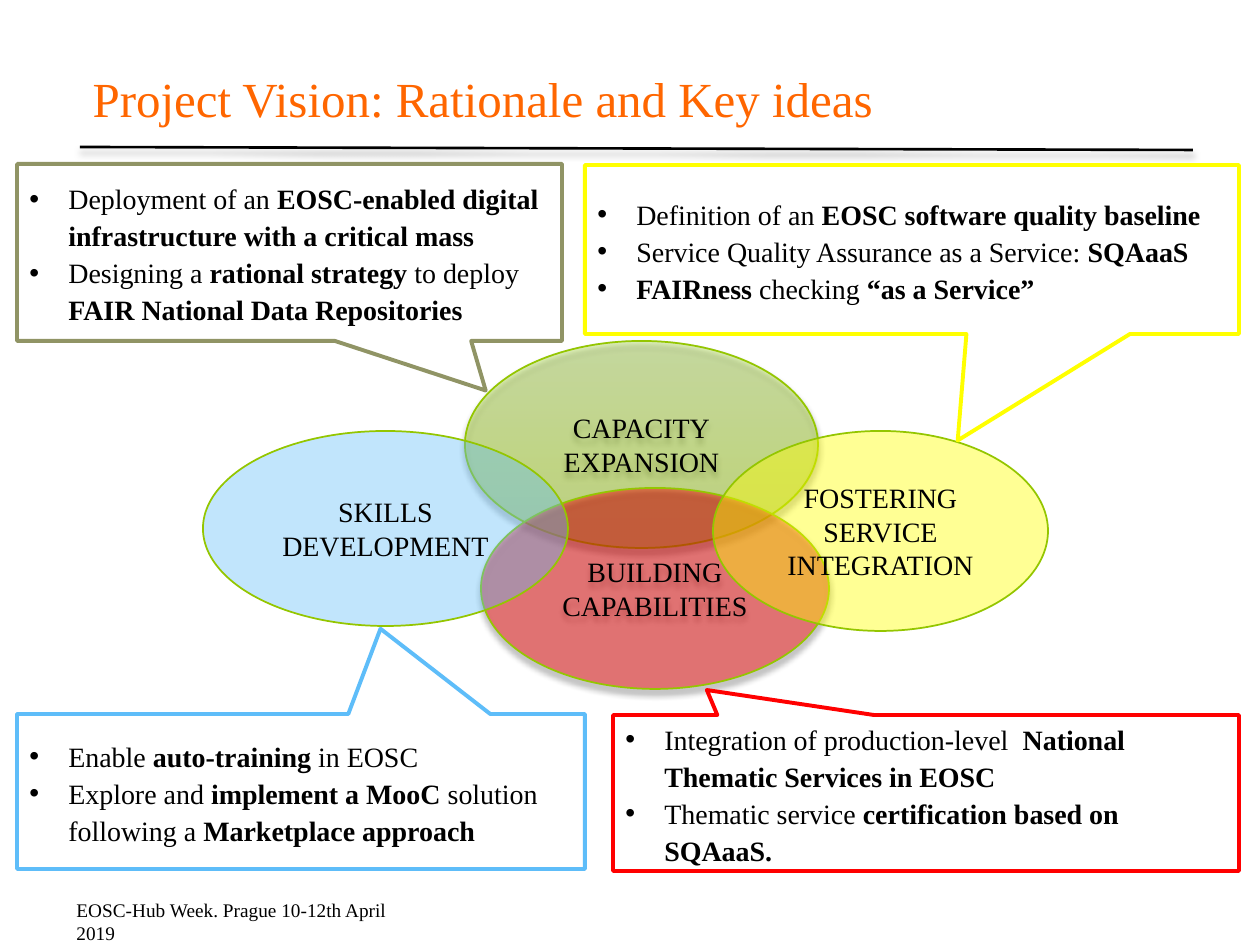
from dataclasses import dataclass

from lxml import etree
from pptx import Presentation
from pptx import util as u
from pptx.dml.color import RGBColor
from pptx.enum import shapes, text
from pptx.oxml.ns import qn

EMU_PER_PX = 914400 / 126
FONT = "Times New Roman"
GREEN = "94C600"


@dataclass
class Box:
    x: int
    y: int
    w: int
    h: int

    def emu(self):
        return [px(v) for v in (self.x, self.y, self.w, self.h)]


@dataclass
class Topic:
    box: Box
    label: str
    stops: list[tuple[int, str]]  # (position in percent, colour)
    opacity: int
    shadow: bool = False


@dataclass
class Callout:
    """Bullets mark their bold parts with asterisks."""
    box: Box
    tip: tuple[float, float]
    color: str
    bullets: list[str]


TOPICS = [
    Topic(Box(465, 341, 353, 207), "CAPACITY\nEXPANSION",
          [(0, "AFE24A"), (60, "A3DA00"), (100, GREEN)], 37, True),
    Topic(Box(481, 488, 348, 201), "BUILDING\nCAPABILITIES", [(0, "FF0000")], 43, True),
    Topic(Box(203, 431, 365, 195), "SKILLS\nDEVELOPMENT", [(0, "5EBDF9")], 38),
    Topic(Box(713, 431, 335, 200), "FOSTERING SERVICE INTEGRATION", [(0, "FFFF00")], 42),
]

CALLOUTS = [
    Callout(Box(17, 164, 545, 177), (0.36, 0.78), "909465", [
        "Deployment of an *EOSC-enabled digital infrastructure with a critical mass*",
        "Designing a *rational strategy *to deploy *FAIR National Data Repositories*"]),
    Callout(Box(17, 714, 568, 155), (0.14, -1.05), "5EBDF9", [
        "Enable *auto-training *in EOSC",
        "Explore and *implement a MooC *solution following a *Marketplace approach*"]),
    Callout(Box(613, 715, 626, 156), (-0.35, -0.66), "FF0000", [
        "Integration of production-level  *National Thematic Services in EOSC*",
        "Thematic service *certification based on SQAaaS.*"]),
    Callout(Box(585, 165, 654, 169), (0.07, 1.13), "FFFF00", [
        "Definition of an *EOSC software quality baseline*",
        "Service Quality Assurance as a Service: *SQAaaS*",
        "*FAIRness *checking *“as a Service”*"]),
]


def px(n: int) -> int:
    return round(n * EMU_PER_PX)


def rgb(color: str) -> RGBColor:
    return RGBColor.from_string(color)


def sub(parent, tag: str, **attrs):
    return etree.SubElement(parent, qn(tag), {k: str(v) for k, v in attrs.items()})


def add_alpha(color_el, percent: int) -> None:
    sub(color_el, "a:alpha", val=percent * 1000)


def add_shadow(effects, opacity: int, blur: float) -> None:
    shadow = sub(effects, "a:outerShdw", blurRad=int(u.Pt(blur)), dist=int(u.Pt(3)),
                 dir=5400000, algn="ctr", rotWithShape=0)
    add_alpha(sub(shadow, "a:srgbClr", val="000000"), opacity)


def style_font(font, size: int, color: str = "000000") -> None:
    font.name = FONT
    font.size = u.Pt(size)
    font.color.rgb = rgb(color)


def add_outlined(s, kind, box: Box, line: str, width: float):
    sp = s.shapes.add_shape(kind, *box.emu())
    sp.shadow.inherit = False
    sp.line.color.rgb = rgb(line)
    sp.line.width = u.Pt(width)
    sp.text_frame.word_wrap = True
    sp.text_frame.vertical_anchor = text.MSO_ANCHOR.MIDDLE
    return sp


def fill_translucent(sp, stops: list[tuple[int, str]], opacity: int) -> None:
    props = sp._element.spPr
    if len(stops) == 1:
        sp.fill.solid()
        sp.fill.fore_color.rgb = rgb(stops[0][1])
        add_alpha(props.find(qn("a:solidFill"))[0], opacity)
        return
    sp.fill.gradient()
    sp.fill.gradient_angle = 270
    stop_list = props.find(qn("a:gradFill")).find(qn("a:gsLst"))
    for old in list(stop_list):
        stop_list.remove(old)
    for position, color in stops:
        stop = sub(stop_list, "a:gs", pos=position * 1000)
        add_alpha(sub(stop, "a:srgbClr", val=color), opacity)


def add_topic(s, topic: Topic) -> None:
    sp = add_outlined(s, shapes.MSO_SHAPE.OVAL, topic.box, GREEN, 1)
    fill_translucent(sp, topic.stops, topic.opacity)
    if topic.shadow:
        add_shadow(sp._element.spPr.find(qn("a:effectLst")), 48, 3.8)
    sp.text_frame.text = topic.label
    for p in sp.text_frame.paragraphs:
        p.alignment = text.PP_ALIGN.CENTER
        style_font(p.font, 16)


def add_bullet(p, marked: str) -> None:
    props = p._p.get_or_add_pPr()
    props.set("marL", str(px(39)))
    props.set("indent", str(-px(39)))
    sub(props, "a:buFont", typeface="Arial")
    sub(props, "a:buChar", char="•")
    p.line_spacing = 1.1
    p.alignment = text.PP_ALIGN.LEFT
    for i, part in enumerate(marked.split("*")):
        if part:
            r = p.add_run()
            r.text = part
            style_font(r.font, 16)
            r.font.bold = i % 2 == 1


def add_callout(s, callout: Callout) -> None:
    sp = add_outlined(s, shapes.MSO_SHAPE.RECTANGULAR_CALLOUT, callout.box, callout.color, 2.25)
    sp.fill.solid()
    sp.fill.fore_color.rgb = rgb("FFFFFF")
    for i, value in enumerate(callout.tip):
        sp.adjustments[i] = value
    tf = sp.text_frame
    for i, bullet in enumerate(callout.bullets):
        add_bullet(tf.add_paragraph() if i else tf.paragraphs[0], bullet)


def add_title(s) -> None:
    title = s.shapes.title
    title.left, title.top, title.width, title.height = Box(80, 16, 1015, 118).emu()
    tf = title.text_frame
    tf.text = "Project Vision: Rationale and Key ideas"
    tf.vertical_anchor = text.MSO_ANCHOR.BOTTOM
    p = tf.paragraphs[0]
    p.alignment = text.PP_ALIGN.LEFT
    style_font(p.runs[0].font, 28, "FF6600")


def add_rule(s) -> None:
    rule = s.shapes.add_connector(shapes.MSO_CONNECTOR.STRAIGHT,
                                  px(80), px(147), px(1193), px(150))
    rule.line.color.rgb = rgb("000000")
    rule.line.width = u.Pt(1.5)
    add_shadow(sub(rule._element.spPr, "a:effectLst"), 28, 4)


def add_footer(s) -> None:
    tf = s.shapes.add_textbox(*Box(64, 898, 374, 42).emu()).text_frame
    tf.word_wrap = True
    tf.margin_top = 0
    tf.text = "EOSC-Hub Week. Prague 10-12th April 2019"
    style_font(tf.paragraphs[0].runs[0].font, 11)


def main() -> None:
    prs = Presentation()
    prs.slide_width, prs.slide_height = px(1260), px(945)
    s = prs.slides.add_slide(prs.slide_layouts[5])
    add_rule(s)
    add_title(s)
    for topic in TOPICS:
        add_topic(s, topic)
    for callout in CALLOUTS:
        add_callout(s, callout)
    add_footer(s)
    prs.save("out.pptx")


if __name__ == "__main__":
    main()
